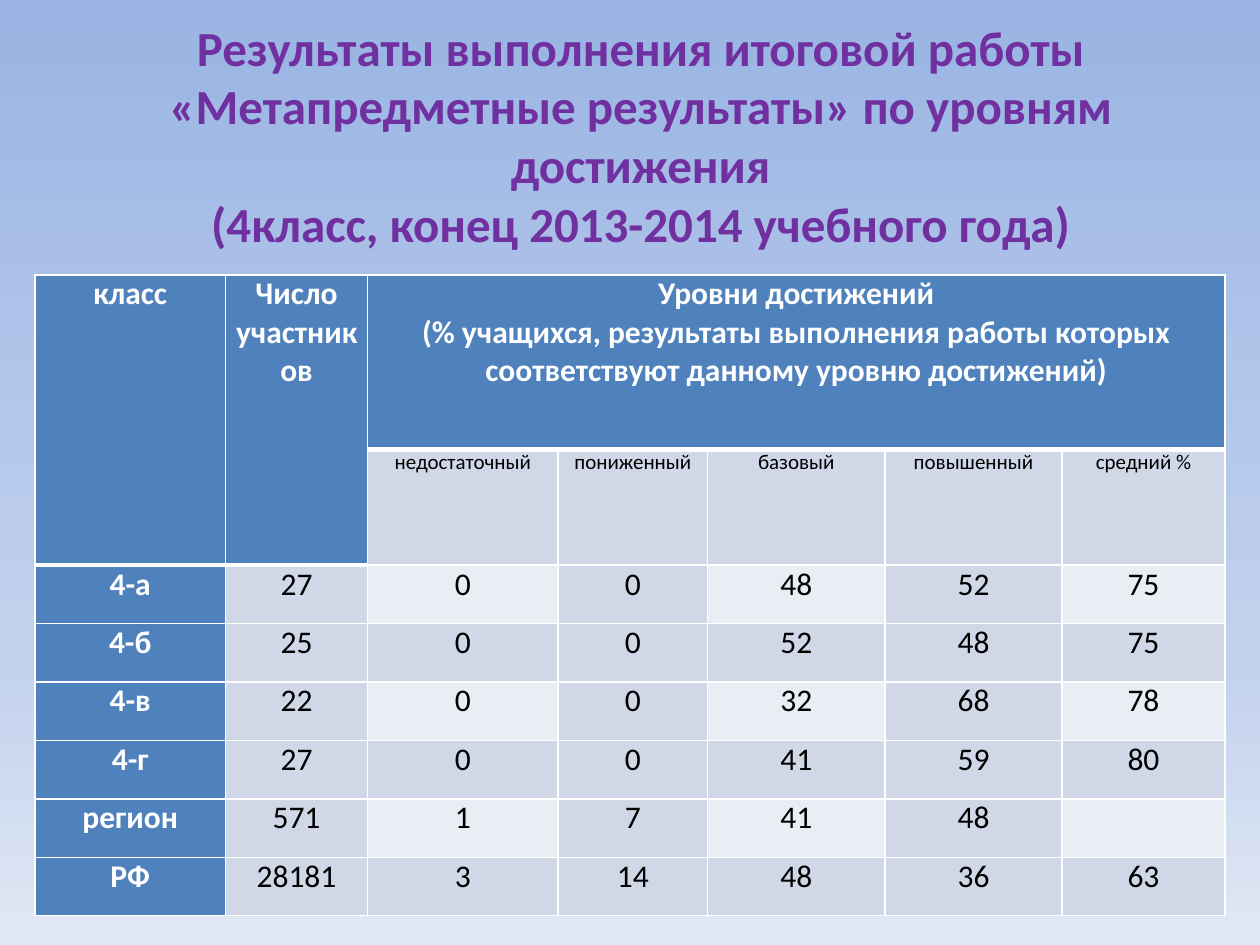
from copy import deepcopy
from typing import NamedTuple

from lxml import etree
from pptx import Presentation
from pptx.dml.color import RGBColor
from pptx.enum.text import MSO_ANCHOR, MSO_AUTO_SIZE, PP_ALIGN
from pptx.oxml.ns import qn
from pptx.util import Pt

CENTER = PP_ALIGN.CENTER
MIDDLE = MSO_ANCHOR.MIDDLE
NO_FIT = MSO_AUTO_SIZE.NONE

WHITE = RGBColor(0xFF, 0xFF, 0xFF)
BLACK = RGBColor(0x00, 0x00, 0x00)
PURPLE = RGBColor(0x70, 0x30, 0xA0)
BLUE = RGBColor(0x4F, 0x81, 0xBD)
BAND = RGBColor(0xD0, 0xD8, 0xE8)
PALE = RGBColor(0xE9, 0xED, 0xF4)
SKY = (
    (0, RGBColor(0x9A, 0xB5, 0xE4)),
    (0.7, RGBColor(0xC2, 0xD1, 0xED)),
    (1, RGBColor(0xE1, 0xE8, 0xF5)),
)
FONT = "Calibri"


class Style(NamedTuple):
    size: float
    color: RGBColor
    bold: bool


TITLE = Style(28, PURPLE, True)
HEAD = Style(18, WHITE, True)
LEVEL = Style(12, BLACK, False)
BODY = Style(18, BLACK, False)

HEADS = (
    ("класс",),
    ("Число", "участников"),
    ("Уровни достижений",
     "(% учащихся, результаты выполнения работы которых "
     "соответствуют данному уровню достижений)"),
)
LEVELS = ("недостаточный", "пониженный", "базовый", "повышенный", "средний %")
DATA = (
    ("4-а", "27", "0", "0", "48", "52", "75"),
    ("4-б", "25", "0", "0", "52", "48", "75"),
    ("4-в", "22", "0", "0", "32", "68", "78"),
    ("4-г", "27", "0", "0", "41", "59", "80"),
    ("регион", "571", "1", "7", "41", "48", ""),
    ("РФ", "28181", "3", "14", "48", "36", "63"),
)
WIDTHS = (108.8, 81.3, 108.8, 85.5, 101.3, 101.3, 93)
HEIGHTS = (100, 28) + (33.4,) * len(DATA)


def add_run(para, text: str, style: Style) -> None:
    run = para.add_run()
    run.text = text
    font = run.font
    font.name, font.size, font.bold = FONT, Pt(style.size), style.bold
    font.color.rgb = style.color


def set_edge(cell, side: str, width: float) -> None:
    line = etree.SubElement(cell._tc.get_or_add_tcPr(), qn(f"a:ln{side}"), w=str(Pt(width)))
    fill = etree.SubElement(line, qn("a:solidFill"))
    etree.SubElement(fill, qn("a:srgbClr"), val=str(WHITE))


def fill_cell(cell, lines: tuple, style: Style) -> None:
    for i, text in enumerate(lines):
        frame = cell.text_frame
        para = frame.paragraphs[0] if i == 0 else frame.add_paragraph()
        para.alignment = CENTER
        if text:
            add_run(para, text, style)


def cell_fill(row: int, col: int) -> RGBColor:
    if row == 0 or col == 0 or (row == 1 and col == 1):
        return BLUE
    return PALE if row > 1 and row % 2 == 0 and col % 2 == 0 else BAND


def set_back(slide) -> None:
    fill = slide.background.fill
    fill.gradient()
    fill.gradient_angle = 270
    stops = next(slide.element.iter(qn("a:gsLst")))
    stops.insert(1, deepcopy(stops[0]))
    for stop, (place, color) in zip(fill.gradient_stops, SKY):
        stop.position = place
        stop.color.rgb = color
    # The middle stop is partly transparent
    etree.SubElement(stops[1][0], qn("a:alpha"), val="41000")


def add_title(slide) -> None:
    title = slide.shapes.title
    title.left, title.top, title.width, title.height = Pt(20), Pt(49), Pt(692), Pt(90)
    frame = title.text_frame
    frame.word_wrap, frame.auto_size = True, NO_FIT
    frame.vertical_anchor = MIDDLE
    frame.margin_bottom = Pt(37.6)  # lifts the text by half a line
    para = frame.paragraphs[0]
    para.alignment = CENTER
    add_run(para, "Результаты выполнения итоговой работы "
            "«Метапредметные результаты» по уровням достижения", TITLE)
    para.add_line_break()
    add_run(para, "(4класс, конец 2013-2014 учебного года)", TITLE)


def add_grid(slide) -> None:
    table = slide.shapes.add_table(
        len(HEIGHTS), len(WIDTHS), Pt(20), Pt(157), Pt(sum(WIDTHS)), Pt(sum(HEIGHTS))
    ).table
    table.first_col = True
    for col, width in zip(table.columns, WIDTHS):
        col.width = Pt(width)
    for row, height in zip(table.rows, HEIGHTS):
        row.height = Pt(height)

    # Margins, edges and fills; a thick edge runs under the header
    for r in range(len(HEIGHTS)):
        for c in range(len(WIDTHS)):
            cell = table.cell(r, c)
            cell.margin_left = cell.margin_right = Pt(5)
            cell.margin_top = cell.margin_bottom = Pt(0)
            last = 1 if c < 2 else 0
            set_edge(cell, "L", 1)
            set_edge(cell, "R", 1)
            set_edge(cell, "T", 3 if r == last + 1 else 1)
            set_edge(cell, "B", 3 if r in (0, last) else 1)
            cell.fill.solid()
            cell.fill.fore_color.rgb = cell_fill(r, c)

    # Header
    for c in range(2):
        table.cell(0, c).merge(table.cell(1, c))
    table.cell(0, 2).merge(table.cell(0, len(WIDTHS) - 1))
    for c, lines in enumerate(HEADS):
        fill_cell(table.cell(0, c), lines, HEAD)
    for c, text in enumerate(LEVELS, 2):
        fill_cell(table.cell(1, c), (text,), LEVEL)

    # Results
    for r, values in enumerate(DATA, 2):
        for c, text in enumerate(values):
            fill_cell(table.cell(r, c), (text,), BODY if c else HEAD)


def main() -> None:
    deck = Presentation()
    deck.slide_width, deck.slide_height = Pt(720), Pt(540)
    slide = deck.slides.add_slide(deck.slide_layouts[5])
    set_back(slide)
    add_title(slide)
    add_grid(slide)
    deck.save("out.pptx")


if __name__ == "__main__":
    main()
